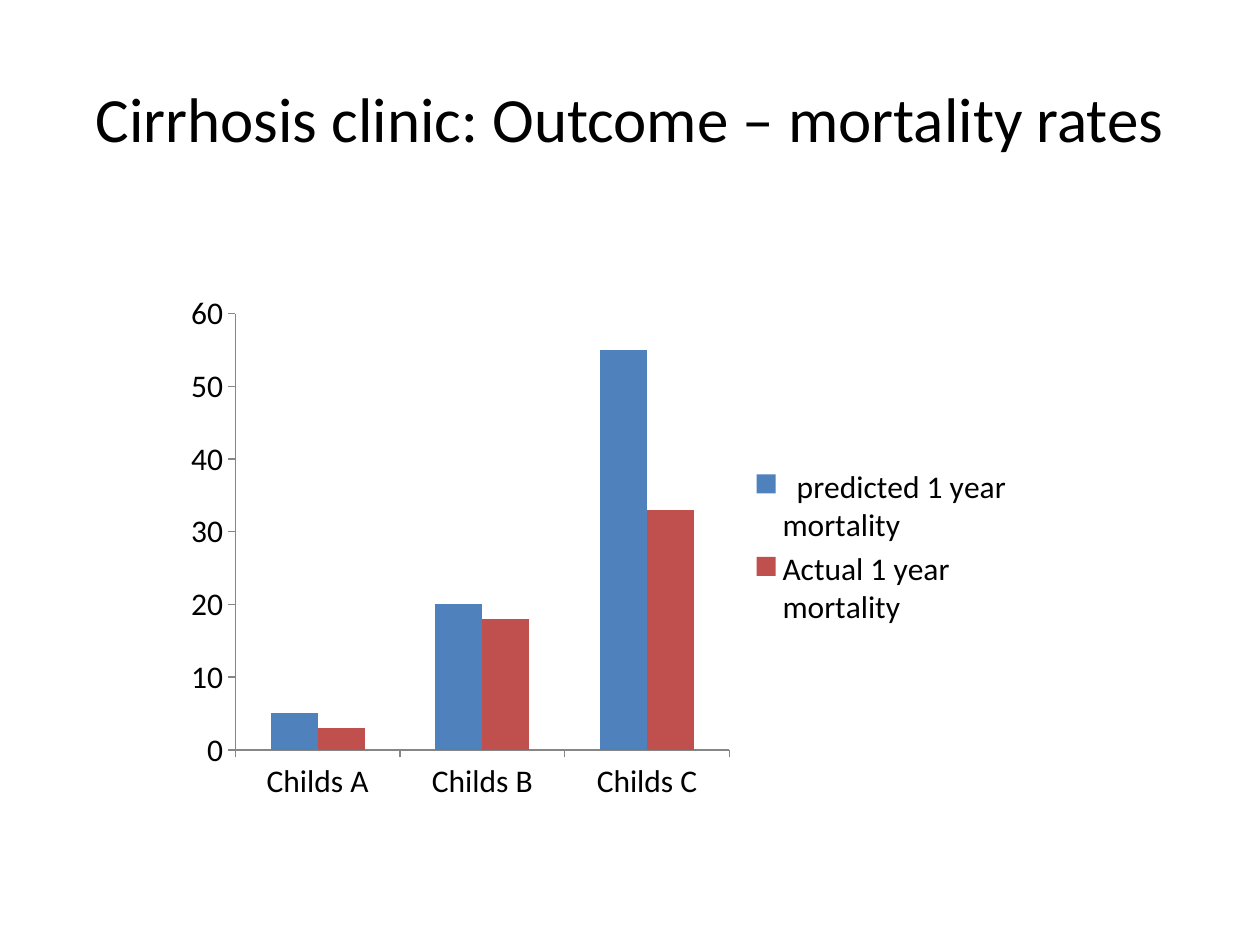
from dataclasses import dataclass

from pptx import Presentation
from pptx.chart.axis import _BaseAxis
from pptx.chart.data import CategoryChartData
from pptx.dml.color import RGBColor
from pptx.enum.chart import XL_CHART_TYPE, XL_LEGEND_POSITION, XL_TICK_MARK
from pptx.enum.text import MSO_ANCHOR, PP_ALIGN
from pptx.slide import Slide
from pptx.text.text import Font
from pptx.util import Emu, Pt

EMU_PER_PX = 914400 / 126


@dataclass(frozen=True)
class Theme:
    """Colours, font and type sizes of the slide."""
    font: str = "Calibri"
    text: str = "000000"
    axis: str = "868686"
    title_size: int = 36
    chart_size: int = 18


@dataclass(frozen=True)
class Box:
    """A rectangle in px."""
    left: int
    top: int
    width: int
    height: int

    def emu(self) -> tuple[Emu, ...]:
        """Return left, top, width and height in EMU."""
        return tuple(map(px, (self.left, self.top, self.width, self.height)))


@dataclass(frozen=True)
class Series:
    """One set of mortality rates."""
    name: str
    values: tuple[int, ...]
    color: str


THEME = Theme()
CLASSES = ("Childs A", "Childs B", "Childs C")
MORTALITY = (
    Series("  predicted 1 year mortality", (5, 20, 55), "4F81BD"),
    Series("Actual 1 year mortality", (3, 18, 33), "C0504D"),
)


def px(n: int) -> Emu:
    """Turn px into EMU."""
    return Emu(round(n * EMU_PER_PX))


def style_font(font: Font, size: int) -> None:
    """Apply the theme font, colour and a size."""
    font.name = THEME.font
    font.size = Pt(size)
    font.color.rgb = RGBColor.from_string(THEME.text)


def add_title(s: Slide, text: str, box: Box) -> None:
    """Fill and place the title placeholder."""
    sp = s.shapes.title
    sp.left, sp.top, sp.width, sp.height = box.emu()
    tf = sp.text_frame
    tf.text = text
    tf.vertical_anchor = MSO_ANCHOR.MIDDLE
    p = tf.paragraphs[0]
    p.alignment = PP_ALIGN.CENTER
    style_font(p.runs[0].font, THEME.title_size)


def style_axis(axis: _BaseAxis) -> None:
    """Give an axis a grey line and outside ticks, without gridlines."""
    axis.has_major_gridlines = False
    axis.major_tick_mark = XL_TICK_MARK.OUTSIDE
    axis.minor_tick_mark = XL_TICK_MARK.NONE
    axis.format.line.color.rgb = RGBColor.from_string(THEME.axis)
    axis.format.line.width = Pt(0.75)


def add_mortality_chart(s: Slide, box: Box) -> None:
    """Draw predicted against actual mortality as clustered columns."""
    data = CategoryChartData()
    data.categories = CLASSES
    for series in MORTALITY:
        data.add_series(series.name, series.values)
    chart = s.shapes.add_chart(
        XL_CHART_TYPE.COLUMN_CLUSTERED, *box.emu(), data
    ).chart
    style_font(chart.font, THEME.chart_size)
    chart.has_title = False
    chart.has_legend = True
    chart.legend.position = XL_LEGEND_POSITION.RIGHT
    chart.legend.include_in_layout = False
    for axis in (chart.category_axis, chart.value_axis):
        style_axis(axis)
    chart.value_axis.minimum_scale = 0
    chart.value_axis.maximum_scale = 60
    chart.value_axis.major_unit = 10
    plot = chart.plots[0]
    plot.gap_width = 150
    plot.overlap = 0
    plot.vary_by_categories = False
    for bars, series in zip(plot.series, MORTALITY):
        bars.format.fill.solid()
        bars.format.fill.fore_color.rgb = RGBColor.from_string(series.color)


def main() -> None:
    """Build and save the slide."""
    prs = Presentation()
    prs.slide_width, prs.slide_height = px(1260), px(945)
    s = prs.slides.add_slide(prs.slide_layouts.get_by_name("Title Only"))
    add_title(s, "Cirrhosis clinic: Outcome – mortality rates", Box(63, 38, 1134, 158))
    add_mortality_chart(s, Box(174, 284, 853, 527))
    prs.save("out.pptx")


if __name__ == "__main__":
    main()
